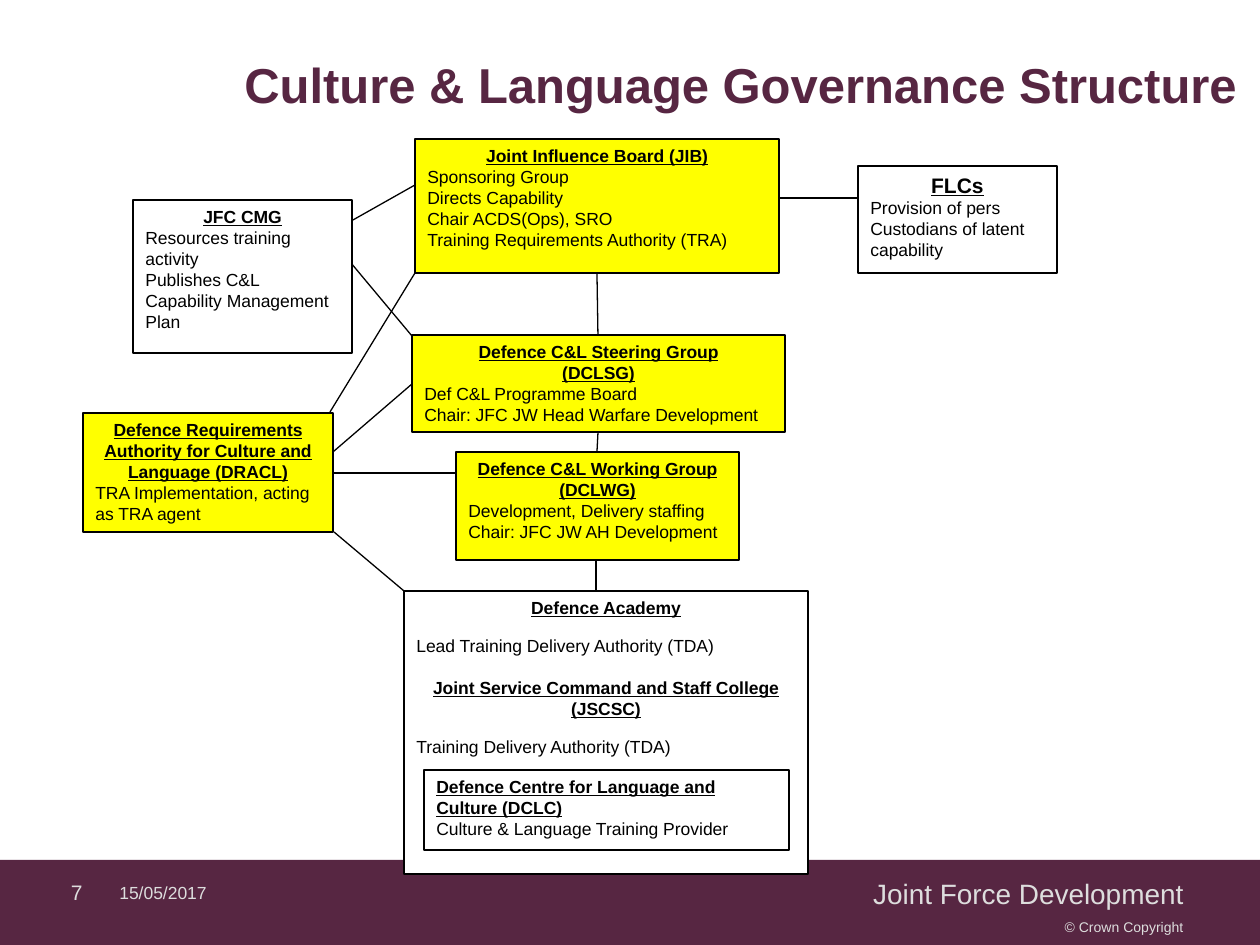
from lxml.etree import SubElement
from pptx import Presentation
from pptx.dml.color import RGBColor
from pptx.enum.shapes import MSO_CONNECTOR, MSO_SHAPE
from pptx.enum.text import MSO_ANCHOR, PP_ALIGN
from pptx.oxml.ns import qn
from pptx.util import Pt

PX = 914400 / 126
PLUM, PALE, YELLOW, WHITE, BLACK = "572642", "DDDDDD", "FFFF00", "FFFFFF", "000000"
LEFT, MID, RIGHT = PP_ALIGN.LEFT, PP_ALIGN.CENTER, PP_ALIGN.RIGHT


def emu(*px):
    return [round(n * PX) for n in px]


def write(para, text, hue, align, gap=0, **look):
    """Fill one paragraph; gap is the space above it in px."""
    para.alignment = align
    para.space_before = emu(gap)[0]
    run = para.add_run()
    run.text = text
    run.font.color.rgb = RGBColor.from_string(hue)
    for key, value in ({"name": "Arial"} | look).items():
        setattr(run.font, key, value)


deck = Presentation()
deck.slide_width, deck.slide_height = emu(1260, 945)
slide = deck.slides.add_slide(deck.slide_layouts[6])
shapes = slide.shapes

band = shapes.add_shape(MSO_SHAPE.RECTANGLE, *emu(0, 860, 1260, 89))
band.shadow.inherit = False
band.fill.solid()
band.fill.fore_color.rgb = RGBColor.from_string(PLUM)
band.line.fill.background()

# place, text, size, colour, alignment, bold
labels = [
    ((446, 913, 750, 28), "© Crown Copyright", 8, PALE, RIGHT, False),
    ((446, 873, 750, 40), "Joint Force Development", 16, PALE, RIGHT, False),
    ((94, 877, 125, 30), "15/05/2017", 10, PALE, RIGHT, False),
    ((20, 877, 75, 30), "7", 12, PALE, RIGHT, False),
    ((232, 23, 1046, 121), "Culture & Language Governance Structure", 28, PLUM, LEFT, True),
]
for place, text, size, hue, align, bold in labels:
    frame = shapes.add_textbox(*emu(*place)).text_frame
    frame.word_wrap = True
    frame.vertical_anchor = MSO_ANCHOR.MIDDLE
    write(frame.paragraphs[0], text, hue, align, size=Pt(size), bold=bold)

links = [
    (415, 185, 353, 220),  # JIB to CMG
    (334, 532, 404, 591),  # DRACL to Academy
    (412, 336, 351, 263),  # DCLSG to CMG
    (330, 412, 415, 273),  # DRACL to JIB
    (333, 452, 412, 384),  # DRACL to DCLSG
    (333, 473, 456, 473),  # DRACL to DCLWG
    (779, 198, 858, 198),  # JIB to FLCs
    (597, 273, 598, 335),  # JIB to DCLSG
    (598, 433, 597, 452),  # DCLSG to DCLWG
    (596, 561, 596, 591),  # DCLWG to Academy
]
for ends in links:
    link = shapes.add_connector(MSO_CONNECTOR.STRAIGHT, *emu(*ends))
    link.line.color.rgb = RGBColor.from_string(BLACK)
    link.line.width = Pt(0.75)
    SubElement(link._element.spPr, qn("a:effectLst"))

HEAD = {"size": Pt(10), "bold": True, "underline": True, "align": MID}
BODY = {"size": Pt(10), "bold": False, "underline": False, "align": LEFT}
# place, fill, lines of (text, look)
boxes = [
    ((412, 335, 373, 97), YELLOW, [
        ("Defence C&L Steering Group", HEAD),
        ("(DCLSG)", HEAD),
        ("Def C&L Programme Board", BODY),
        ("Chair: JFC JW Head Warfare Development", BODY)]),
    ((456, 452, 283, 108), YELLOW, [
        ("Defence C&L Working Group", HEAD),
        ("(DCLWG)", HEAD),
        ("Development, Delivery staffing", BODY),
        ("Chair: JFC JW AH Development", BODY)]),
    ((404, 591, 404, 283), WHITE, [
        ("Defence Academy", HEAD),
        ("Lead Training Delivery Authority (TDA)", BODY | {"gap": 17}),
        ("Joint Service Command and Staff College (JSCSC)", HEAD | {"gap": 21}),
        ("Training Delivery Authority (TDA)", BODY | {"gap": 17})]),
    ((415, 139, 364, 134), YELLOW, [
        ("Joint Influence Board (JIB)", HEAD),
        ("Sponsoring Group", BODY),
        ("Directs Capability", BODY),
        ("Chair ACDS(Ops), SRO", BODY),
        ("Training Requirements Authority (TRA)", BODY)]),
    ((83, 413, 250, 119), YELLOW, [
        ("Defence Requirements Authority for Culture and Language (DRACL)", HEAD),
        ("TRA Implementation, acting as TRA agent", BODY)]),
    ((858, 166, 199, 107), WHITE, [
        ("FLCs", HEAD | {"size": Pt(12)}),
        ("Provision of pers", BODY),
        ("Custodians of latent capability", BODY)]),
    ((424, 770, 365, 80), WHITE, [
        ("Defence Centre for Language and Culture (DCLC)", HEAD | {"align": LEFT}),
        ("Culture & Language Training Provider", BODY)]),
    ((133, 200, 219, 153), WHITE, [
        ("JFC CMG", HEAD),
        ("Resources training activity", BODY),
        ("Publishes C&L Capability Management Plan", BODY)]),
]
for place, fill, lines in boxes:
    box = shapes.add_shape(MSO_SHAPE.FLOWCHART_PROCESS, *emu(*place))
    box.shadow.inherit = False
    box.fill.solid()
    box.fill.fore_color.rgb = RGBColor.from_string(fill)
    box.line.color.rgb = RGBColor.from_string(BLACK)
    box.line.width = Pt(0.75)
    frame = box.text_frame
    frame.word_wrap = True
    frame.vertical_anchor = MSO_ANCHOR.TOP
    for i, (text, look) in enumerate(lines):
        para = frame.add_paragraph() if i else frame.paragraphs[0]
        write(para, text, BLACK, **look)

deck.save("out.pptx")
